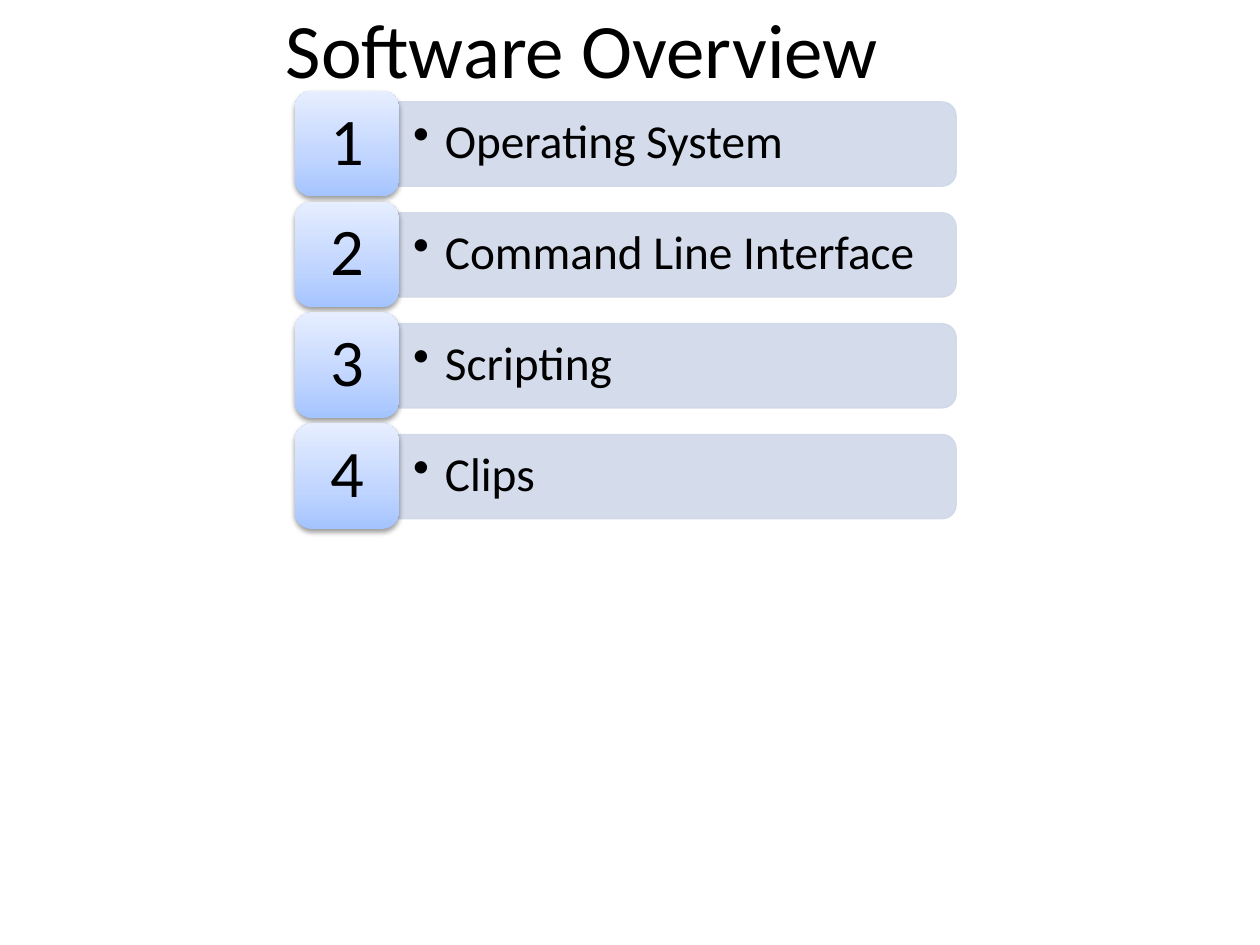
import pptx
import pptx.dml.color
import pptx.enum.shapes
import pptx.enum.text
import pptx.oxml
import pptx.oxml.ns
import pptx.util

Cm, Pt = pptx.util.Cm, pptx.util.Pt
RGB = pptx.dml.color.RGBColor
SHAPE = pptx.enum.shapes.MSO_SHAPE
ALIGN = pptx.enum.text.PP_ALIGN
NS = pptx.oxml.ns.nsdecls("a")

COLORS = {"text": "000000", "bar": "D0D8E8", "low": "A4C4FF",
          "mid": "BFD4FF", "high": "E6EEFF"}
ITEMS = ["Operating System", "Command Line Interface", "Scripting", "Clips"]
PITCH = 2.235

GRADIENT = f"""<a:gradFill {NS} rotWithShape="1"><a:gsLst>
<a:gs pos="0"><a:srgbClr val="{COLORS['low']}"/></a:gs>
<a:gs pos="35000"><a:srgbClr val="{COLORS['mid']}"/></a:gs>
<a:gs pos="100000"><a:srgbClr val="{COLORS['high']}"/></a:gs>
</a:gsLst><a:lin ang="16200000" scaled="1"/></a:gradFill>"""
SHADOW = f"""<a:effectLst {NS}>
<a:outerShdw blurRad="{Pt(3.1)}" dist="{Pt(1.6)}" dir="5400000" rotWithShape="0">
<a:srgbClr val="000000"><a:alpha val="38000"/></a:srgbClr>
</a:outerShdw></a:effectLst>"""
ALPHA = f'<a:alpha {NS} val="90000"/>'
BULLET = f'<a:buChar {NS} char="•"/>'


def add_text(s, box, text, size, inset, align=ALIGN.LEFT, spacing=1.0, bullet=False):
    tf = s.shapes.add_textbox(*map(Cm, box)).text_frame
    frame = {"word_wrap": True, "vertical_anchor": pptx.enum.text.MSO_ANCHOR.MIDDLE,
             "margin_left": Cm(inset[0]), "margin_right": Cm(inset[0]),
             "margin_top": Cm(inset[1]), "margin_bottom": Cm(inset[1])}
    for name, value in frame.items():
        setattr(tf, name, value)
    p = tf.paragraphs[0]
    p.alignment, p.line_spacing = align, spacing
    if bullet:
        p.level = 1
        pPr = p._p.get_or_add_pPr()
        pPr.set("marL", str(Cm(0.64)))
        pPr.set("indent", str(Cm(-0.64)))
        pPr.append(pptx.oxml.parse_xml(BULLET))
    r = p.add_run()
    r.text = text
    for name, value in {"name": "Calibri", "size": Pt(size)}.items():
        setattr(r.font, name, value)
    r.font.color.rgb = RGB.from_string(COLORS["text"])


prs = pptx.Presentation()
prs.slide_width, prs.slide_height = Cm(25.4), Cm(19.05)
s = prs.slides.add_slide(prs.slide_layouts[6])

# Title
add_text(s, (5.51, -0.2, 14.4, 2.34), "Software Overview", 44, (0.25, 0.13))

# Numbered list
for i, item in enumerate(ITEMS):
    top = 1.83 + i * PITCH

    # Bar, turned so that its rounded end is on the right
    sp = s.shapes.add_shape(SHAPE.ROUND_2_SAME_RECTANGLE,
                            Cm(12.8), Cm(top - 4.55), Cm(1.7), Cm(11.25))
    sp.rotation = 90
    sp.shadow.inherit = False
    sp.fill.solid()
    sp.line.width = Pt(0.75)
    for fill in (sp.fill, sp.line.fill):
        fill.solid()
        fill.fore_color.rgb = RGB.from_string(COLORS["bar"])
    for clr in sp._element.spPr.iter(pptx.oxml.ns.qn("a:srgbClr")):
        clr.append(pptx.oxml.parse_xml(ALPHA))
    add_text(s, (8.05, top + 0.3, 11.15, 1.53), item, 27, (0.28, 0.16),
             spacing=0.9, bullet=True)

    # Number tile
    sp = s.shapes.add_shape(SHAPE.ROUNDED_RECTANGLE,
                            Cm(5.94), Cm(top), Cm(2.11), Cm(2.13))
    sp.line.fill.background()
    spPr = sp._element.spPr
    spPr.insert(2, pptx.oxml.parse_xml(GRADIENT))
    spPr.append(pptx.oxml.parse_xml(SHADOW))
    add_text(s, (6.05, top + 0.1, 1.9, 1.93), str(i + 1), 38, (0.41, 0.2),
             align=ALIGN.CENTER, spacing=0.9)

prs.save("out.pptx")
